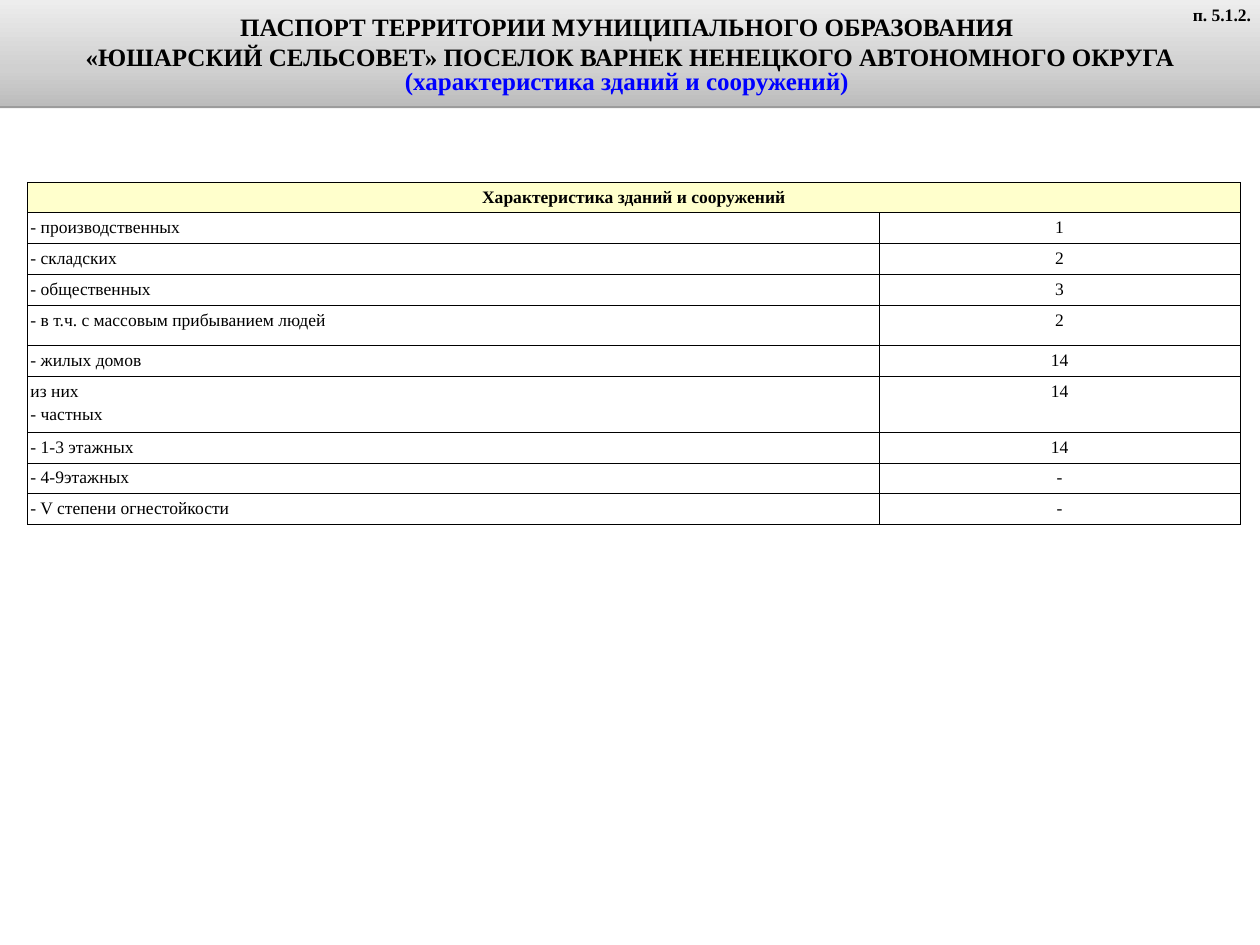
from pptx import Presentation
from pptx.dml.color import RGBColor
from pptx.enum.shapes import MSO_SHAPE
from pptx.enum.text import MSO_ANCHOR, MSO_AUTO_SIZE, PP_ALIGN
from pptx.oxml import parse_xml
from pptx.oxml.ns import nsdecls
from pptx.util import Cm, Pt

FONT = "Times New Roman"
BLACK, BLUE, WHITE, CREAM = "000000", "0000FF", "FFFFFF", "FFFFCC"
HEADING = "Характеристика зданий и сооружений"
BUILDINGS = [
    (["- производственных"], "1"),
    (["- складских"], "2"),
    (["- общественных"], "3"),
    (["- в т.ч. с массовым прибыванием людей"], "2"),
    (["- жилых домов"], "14"),
    (["из них", "- частных"], "14"),
    (["- 1-3 этажных"], "14"),
    (["- 4-9этажных"], "-"),
    (["- V степени огнестойкости"], "-"),
]
ROW_HEIGHT = 0.87
TALL_ROWS = {4: 1.13, 6: 1.58}


def color(value):
    return RGBColor.from_string(value)


def add_run(paragraph, text, size, bold=False, ink=BLACK):
    run = paragraph.add_run()
    run.text = text
    run.font.name = FONT
    run.font.size = Pt(size)
    run.font.bold = bold
    run.font.color.rgb = color(ink)


def add_band_effects(band):
    """Three-stop vertical gradient and a thin hard shadow below."""
    stops = [(0, "BCBCBC"), (35, "D0D0D0"), (100, "EDEDED")]
    stop_xml = "".join(
        f'<a:gs pos="{position * 1000}"><a:srgbClr val="{value}"/></a:gs>'
        for position, value in stops)
    properties = band.fill._xPr
    band.line.fill.background()
    properties.find("{*}ln").addprevious(parse_xml(
        f'<a:gradFill {nsdecls("a")} rotWithShape="1"><a:gsLst>{stop_xml}</a:gsLst>'
        '<a:lin ang="16200000" scaled="0"/></a:gradFill>'))
    properties.append(parse_xml(
        f'<a:effectLst {nsdecls("a")}><a:outerShdw blurRad="0" dist="20000" '
        'dir="5400000" rotWithShape="0"><a:srgbClr val="000000">'
        '<a:alpha val="38000"/></a:srgbClr></a:outerShdw></a:effectLst>'))


def add_header(slide, left, top, width, height):
    # Title band
    band = slide.shapes.add_shape(
        MSO_SHAPE.RECTANGLE, Cm(left), Cm(top), Cm(width), Cm(height))
    add_band_effects(band)
    frame = band.text_frame
    frame.word_wrap = True
    frame.vertical_anchor = MSO_ANCHOR.MIDDLE
    title = frame.paragraphs[0]
    title.alignment = PP_ALIGN.CENTER
    add_run(title, "ПАСПОРТ ТЕРРИТОРИИ МУНИЦИПАЛЬНОГО ОБРАЗОВАНИЯ ", 20, True)
    title.add_line_break()
    add_run(title, "«ЮШАРСКИЙ СЕЛЬСОВЕТ» ПОСЕЛОК ВАРНЕК НЕНЕЦКОГО АВТОНОМНОГО ОКРУГА",
            20, True)
    subtitle = frame.add_paragraph()
    subtitle.alignment = PP_ALIGN.CENTER
    subtitle.line_spacing = 0.8
    add_run(subtitle, "(характеристика зданий и сооружений) ", 20, True, BLUE)


def add_section_number(slide, left, top, width, height):
    box = slide.shapes.add_textbox(Cm(left), Cm(top), Cm(width), Cm(height))
    frame = box.text_frame
    frame.word_wrap = True
    frame.auto_size = MSO_AUTO_SIZE.SHAPE_TO_FIT_TEXT
    number = frame.paragraphs[0]
    number.alignment = PP_ALIGN.RIGHT
    add_run(number, "п. 5.1.2.", 14, True)


def set_borders(cell, left=1, right=1, top=1, bottom=1):
    properties = cell._tc.get_or_add_tcPr()
    sides = [("lnL", left), ("lnR", right), ("lnT", top), ("lnB", bottom)]
    for index, (side, points) in enumerate(sides):
        properties.insert(index, parse_xml(
            f'<a:{side} {nsdecls("a")} w="{Pt(points)}"><a:solidFill>'
            f'<a:srgbClr val="{BLACK}"/></a:solidFill></a:{side}>'))


def fill_cell(cell, lines, alignment, bold=False, background=WHITE, **borders):
    cell.margin_left = cell.margin_right = Cm(0.08)
    cell.margin_top = cell.margin_bottom = Cm(0.15)
    cell.fill.solid()
    cell.fill.fore_color.rgb = color(background)
    set_borders(cell, **borders)
    frame = cell.text_frame
    for index, line in enumerate(lines):
        paragraph = frame.add_paragraph() if index else frame.paragraphs[0]
        paragraph.alignment = alignment
        if index:
            paragraph.space_before = Pt(2.8)
        add_run(paragraph, line, 14, bold)


def add_buildings_table(slide, left, top, width, label_width):
    heights = [TALL_ROWS.get(row, ROW_HEIGHT) for row in range(len(BUILDINGS) + 1)]
    table = slide.shapes.add_table(
        len(heights), 2, Cm(left), Cm(top), Cm(width), Cm(sum(heights))).table
    table.first_row = table.horz_banding = False
    table.columns[0].width = Cm(label_width)
    table.columns[1].width = Cm(width - label_width)
    for row, height in zip(table.rows, heights):
        row.height = Cm(height)

    # Heading across both columns
    heading = table.cell(0, 0)
    heading.merge(table.cell(0, 1))
    heading.vertical_anchor = MSO_ANCHOR.MIDDLE
    fill_cell(heading, [HEADING], PP_ALIGN.CENTER, True, CREAM, top=0.5, right=0.5)
    set_borders(table.cell(0, 1), top=0.5, right=0.5)

    # Building kinds and their counts
    for row, (kind, count) in enumerate(BUILDINGS, start=1):
        fill_cell(table.cell(row, 0), kind, PP_ALIGN.LEFT)
        fill_cell(table.cell(row, 1), [count], PP_ALIGN.CENTER, right=0.5)


def main():
    presentation = Presentation()
    presentation.slide_width = Cm(35.56)
    presentation.slide_height = Cm(26.67)
    slide = presentation.slides.add_slide(presentation.slide_layouts[6])
    add_header(slide, 0, 0, 35.56, 3)
    add_buildings_table(slide, 0.78, 5.14, 34.22, 24.03)
    add_section_number(slide, 33.17, 0, 2.39, 0.85)
    presentation.save("out.pptx")


if __name__ == "__main__":
    main()
